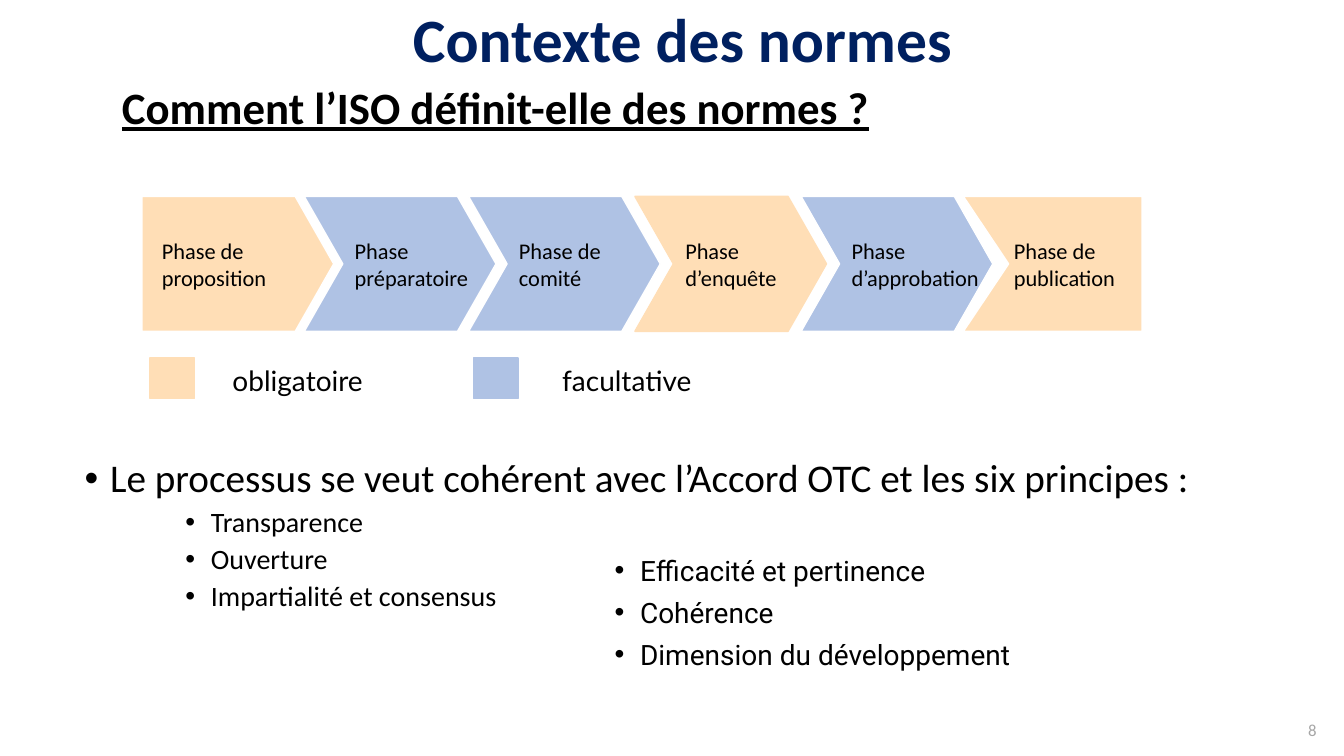
from lxml.etree import SubElement
from pptx import Presentation
from pptx.dml.color import RGBColor
from pptx.enum.shapes import MSO_SHAPE as Form
from pptx.enum.text import MSO_ANCHOR as Anchor, MSO_AUTO_SIZE as Fit, PP_ALIGN as Align
from pptx.oxml.ns import qn
from pptx.util import Cm, Pt

PEACH, BLUE, WHITE = "FFDEB6", "AFC2E4", "FFFFFF"
BLACK, NAVY, GREY = "000000", "002060", "A6A6A6"


def tint(code):
    return RGBColor.from_string(code)


class Sheet:
    font = "Calibri"

    def __init__(self, deck):
        self.page = deck.slides.add_slide(deck.slide_layouts[1])
        self.shapes = self.page.shapes

    def run(self, para, text, size, color=BLACK, font=None, bold=False, under=False):
        run = para.add_run()
        run.text = text
        face = run.font
        face.name, face.size = font or self.font, Pt(size)
        face.bold, face.underline = bold, under
        face.color.rgb = tint(color)

    def place(self, shape, left, top, width, height):
        shape.left, shape.top = Cm(left), Cm(top)
        shape.width, shape.height = Cm(width), Cm(height)
        frame = shape.text_frame
        frame.word_wrap, frame.auto_size = True, Fit.NONE
        return frame

    def title(self, text, *box):
        frame = self.place(self.shapes.title, *box)
        frame.vertical_anchor = Anchor.MIDDLE
        para = frame.paragraphs[0]
        para.alignment, para.line_spacing = Align.CENTER, 0.9
        self.run(para, text, 44, NAVY, bold=True)

    def body(self, *box):
        return self.place(self.page.placeholders[1], *box)

    def label(self, text, size, box, color=BLACK, font=None, align=Align.LEFT):
        frame = self.place(self.shapes.add_textbox(0, 0, 0, 0), *box)
        para = frame.paragraphs[0]
        para.alignment = align
        self.run(para, text, size, color, font)

    def line(self, frame, text, size, margin, hang=0, before=0, after=0, pitch=0.9, **look):
        """Add a list line; a hanging indent gives it a bullet."""
        para = frame.paragraphs[0]
        if para.runs:
            para = frame.add_paragraph()
        para.line_spacing = pitch
        para.space_before, para.space_after = Pt(before), Pt(after)
        props = para._p.get_or_add_pPr()
        props.set("marL", str(Cm(margin)))
        props.set("indent", str(-Cm(hang)))
        if hang:
            SubElement(props, qn("a:buFont")).set("typeface", "Arial")
            SubElement(props, qn("a:buChar")).set("char", "•")
        else:
            SubElement(props, qn("a:buNone"))
        self.run(para, text, size, **look)

    def paint(self, shape, fill, edge):
        shape.shadow.inherit = False
        shape.fill.solid()
        shape.fill.fore_color.rgb = tint(fill)
        shape.line.color.rgb = tint(edge)
        shape.line.width = Pt(1)

    def phase(self, text, left, width, notch, tip, fill, edge, pad, end):
        top, high = 4.95, 3.4
        right, mid, low = left + width, top + high / 2, top + high
        dots = [(right - tip, top), (right, mid), (right - tip, low),
                (left, low), (left + notch, mid)]
        pen = self.shapes.build_freeform(Cm(left), Cm(top))
        pen.add_line_segments([(Cm(x), Cm(y)) for x, y in dots])
        shape = pen.convert_to_shape()
        self.paint(shape, fill, edge)
        frame = shape.text_frame
        frame.word_wrap, frame.vertical_anchor = True, Anchor.MIDDLE
        frame.margin_left, frame.margin_right = Cm(pad), Cm(end)
        frame.margin_top = frame.margin_bottom = 0
        para = frame.paragraphs[0]
        para.alignment = Align.LEFT
        self.run(para, text, 16)

    def key(self, text, left, fill, gap):
        box = self.shapes.add_shape(Form.RECTANGLE, Cm(left), Cm(9.02), Cm(1.12), Cm(1.02))
        self.paint(box, fill, fill)
        self.label(text, 20, (left + gap, 9.04, 4.67, 1.12), font="Lato")


def main():
    deck = Presentation()
    deck.slide_width, deck.slide_height = Cm(33.87), Cm(19.05)
    sheet = Sheet(deck)
    sheet.title("Contexte des normes", 3.35, 0.1, 27.71, 1.96)

    body = sheet.body(1.88, 2.03, 31.57, 13.72)
    sheet.line(body, "Comment l’ISO définit-elle des normes ?", 32, 0.94,
               bold=True, under=True)
    sheet.line(body, "Le processus se veut cohérent avec l’Accord OTC et les six principes :",
               28, 0.64, 0.64, before=232)
    for text in ("Transparence", "Ouverture", "Impartialité et consensus"):
        sheet.line(body, text, 20, 3.18, 0.64, before=5)

    more = sheet.place(sheet.shapes.add_textbox(0, 0, 0, 0), 12.7, 13.82, 14.81, 3.25)
    for text in ("Efficacité et pertinence", "Cohérence", "Dimension du développement"):
        sheet.line(more, text, 20, 3.18, 0.64, after=6, pitch=1.0, font="Roboto")

    wide, tip = 4.83, 0.97
    for row in (
        ("Phase de proposition", 3.58, wide, 0, tip, PEACH, WHITE, 0.5, 0.5),
        ("Phase préparatoire", 7.67, wide, tip, tip, BLUE, WHITE, 1.27, 0.5),
        ("Phase de comité", 11.81, wide, tip, tip, BLUE, WHITE, 1.27, 0.5),
        ("Phase d’enquête", 16, wide, tip, tip, PEACH, PEACH, 1.27, 0.5),
        ("Phase d’approbation", 20.19, wide, tip, tip, BLUE, WHITE, 1.27, 0.2),
        ("Phase de publication", 24.28, 4.5, 1.14, 0, PEACH, WHITE, 1.27, 0),
    ):
        sheet.phase(*row)

    sheet.key("obligatoire", 3.78, PEACH, 1.83)
    sheet.key("facultative", 11.94, BLUE, 1.98)
    sheet.label("8", 12, (31.75, 18.01, 1.68, 0.76), GREY, align=Align.RIGHT)
    deck.save("out.pptx")


if __name__ == "__main__":
    main()
